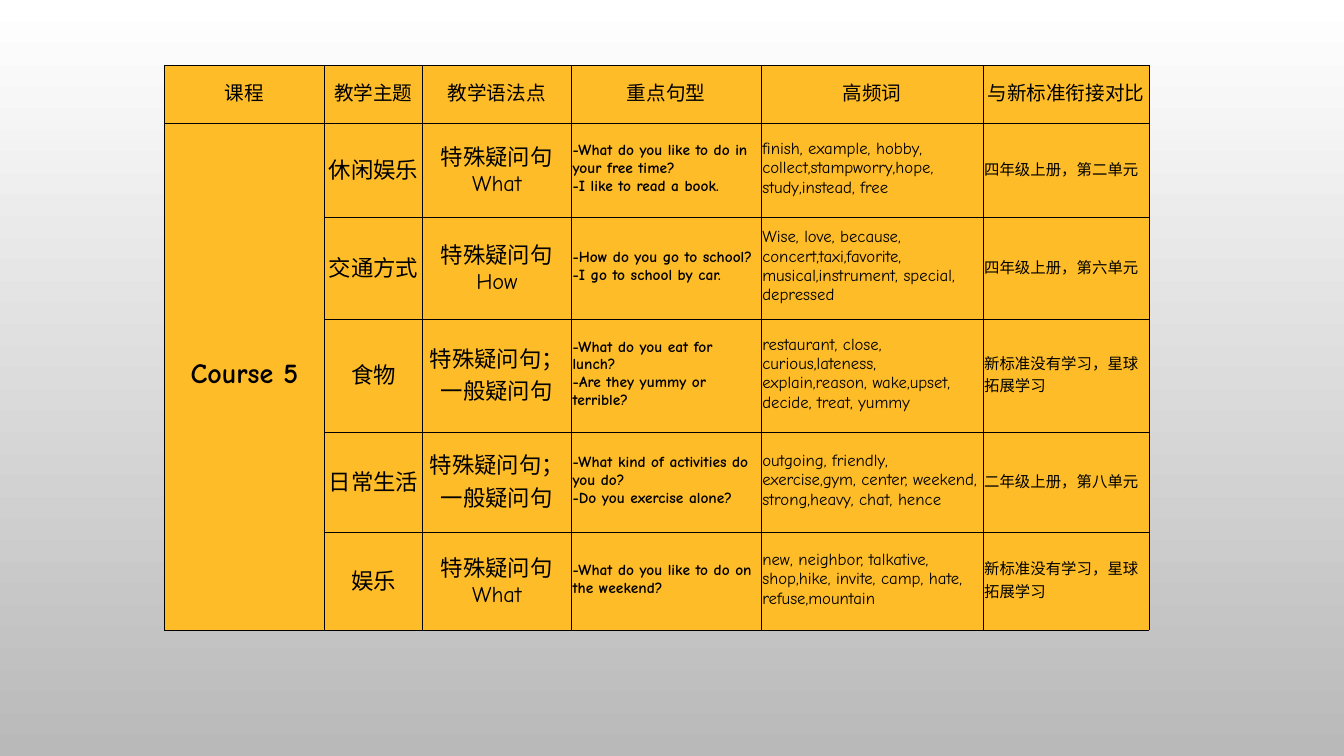
from itertools import groupby

from lxml import etree
from pptx import Presentation
from pptx.dml.color import RGBColor
from pptx.enum.text import MSO_ANCHOR, PP_ALIGN
from pptx.oxml.ns import qn
from pptx.util import Cm, Pt

CENTER, LEFT = PP_ALIGN.CENTER, PP_ALIGN.LEFT
MIDDLE = MSO_ANCHOR.MIDDLE
LATIN_FONT, CHINESE_FONT = "Comic Neue", "Noto Sans CJK SC"
BLACK, AMBER = "000000", "FEBC28"

COLUMN_WIDTHS = [4.04, 2.46, 3.76, 4.78, 5.59, 4.19]
ROW_HEIGHTS = [1.45, 2.38, 2.57, 2.84, 2.53, 2.46]

# Size, bold and alignment of the header and of each body column
HEADER_STYLE = (14, False, CENTER)
COLUMN_STYLES = [
    (20, True, CENTER),
    (16, False, CENTER),
    (16, False, CENTER),
    (11, True, LEFT),
    (12, False, LEFT),
    (11, False, LEFT),
]

HEADERS = ["课程", "教学主题", "教学语法点", "重点句型", "高频词", "与新标准衔接对比"]
COURSE = "Course 5"
LESSONS = [
    ["休闲娱乐", "特殊疑问句What",
     "-What do you like to do in your free time?\n-I like to read a book.",
     "finish, example, hobby, collect,stampworry,hope,\nstudy,instead, free",
     "四年级上册，第二单元"],
    ["交通方式", "特殊疑问句How",
     "-How do you go to school?\n-I go to school by car.",
     "Wise, love, because, concert,taxi,favorite, musical,instrument, special, depressed",
     "四年级上册，第六单元"],
    ["食物", "特殊疑问句；\n一般疑问句",
     "-What do you eat for lunch?\n-Are they yummy or terrible?",
     "restaurant, close, curious,lateness,\nexplain,reason, wake,upset, decide, treat, yummy",
     "新标准没有学习，星球拓展学习"],
    ["日常生活", "特殊疑问句；\n一般疑问句",
     "-What kind of activities do you do?\n-Do you exercise alone?",
     "outgoing, friendly,\nexercise,gym, center, weekend, strong,heavy, chat, hence",
     "二年级上册，第八单元"],
    ["娱乐", "特殊疑问句What",
     "-What do you like to do on the weekend?",
     "new, neighbor, talkative, shop,hike, invite, camp, hate, refuse,mountain",
     "新标准没有学习，星球拓展学习"],
]


def color(hex_string):
    return RGBColor.from_string(hex_string)


def paint_background(page, top, bottom):
    fill = page.background.fill
    fill.gradient()
    fill.gradient_angle = 270
    for stop, shade in zip(fill.gradient_stops, (top, bottom)):
        stop.color.rgb = color(shade)


def add_span(para, text, size, bold):
    span = para.add_run()
    span.text = text
    font = span.font
    font.size, font.bold = Pt(size), bold
    font.color.rgb = color(BLACK)
    font.name = LATIN_FONT if text.isascii() else CHINESE_FONT
    east_asian = etree.SubElement(span._r.get_or_add_rPr(), qn("a:ea"))
    east_asian.set("typeface", CHINESE_FONT)


def write_cell(cell, text, style):
    """Put each line in a paragraph, with Chinese and Latin in separate runs."""
    size, bold, alignment = style
    frame = cell.text_frame
    for index, line in enumerate(text.split("\n")):
        para = frame.add_paragraph() if index else frame.paragraphs[0]
        para.alignment = alignment
        for _, letters in groupby(line, str.isascii):
            add_span(para, "".join(letters), size, bold)


def format_cell(cell):
    cell.margin_left = cell.margin_right = cell.margin_top = Cm(0.03)
    cell.margin_bottom = Cm(0.13)
    cell.vertical_anchor = MIDDLE
    properties = cell._tc.get_or_add_tcPr()
    for side in ("lnL", "lnR", "lnT", "lnB"):
        border = etree.SubElement(properties, qn(f"a:{side}"), w=str(Pt(0.5)))
        fill = etree.SubElement(border, qn("a:solidFill"))
        etree.SubElement(fill, qn("a:srgbClr"), val=BLACK)
    cell.fill.solid()
    cell.fill.fore_color.rgb = color(AMBER)


def add_lesson_table(page):
    table = page.shapes.add_table(
        len(ROW_HEIGHTS), len(COLUMN_WIDTHS), Cm(4.14), Cm(1.65),
        Cm(sum(COLUMN_WIDTHS)), Cm(sum(ROW_HEIGHTS))).table
    table.first_row = table.horz_banding = False
    for column, width in zip(table.columns, COLUMN_WIDTHS):
        column.width = Cm(width)
    for row, height in zip(table.rows, ROW_HEIGHTS):
        row.height = Cm(height)
    for cell in table.iter_cells():
        format_cell(cell)

    for column, header in enumerate(HEADERS):
        write_cell(table.cell(0, column), header, HEADER_STYLE)
    table.cell(1, 0).merge(table.cell(len(LESSONS), 0))
    write_cell(table.cell(1, 0), COURSE, COLUMN_STYLES[0])
    for row, lesson in enumerate(LESSONS, start=1):
        for column, text in enumerate(lesson, start=1):
            write_cell(table.cell(row, column), text, COLUMN_STYLES[column])


def main():
    deck = Presentation()
    deck.slide_width, deck.slide_height = Cm(33.87), Cm(19.05)
    page = deck.slides.add_slide(deck.slide_layouts[6])
    paint_background(page, "FFFFFF", "B9B9B9")
    add_lesson_table(page)
    deck.save("out.pptx")


if __name__ == "__main__":
    main()
